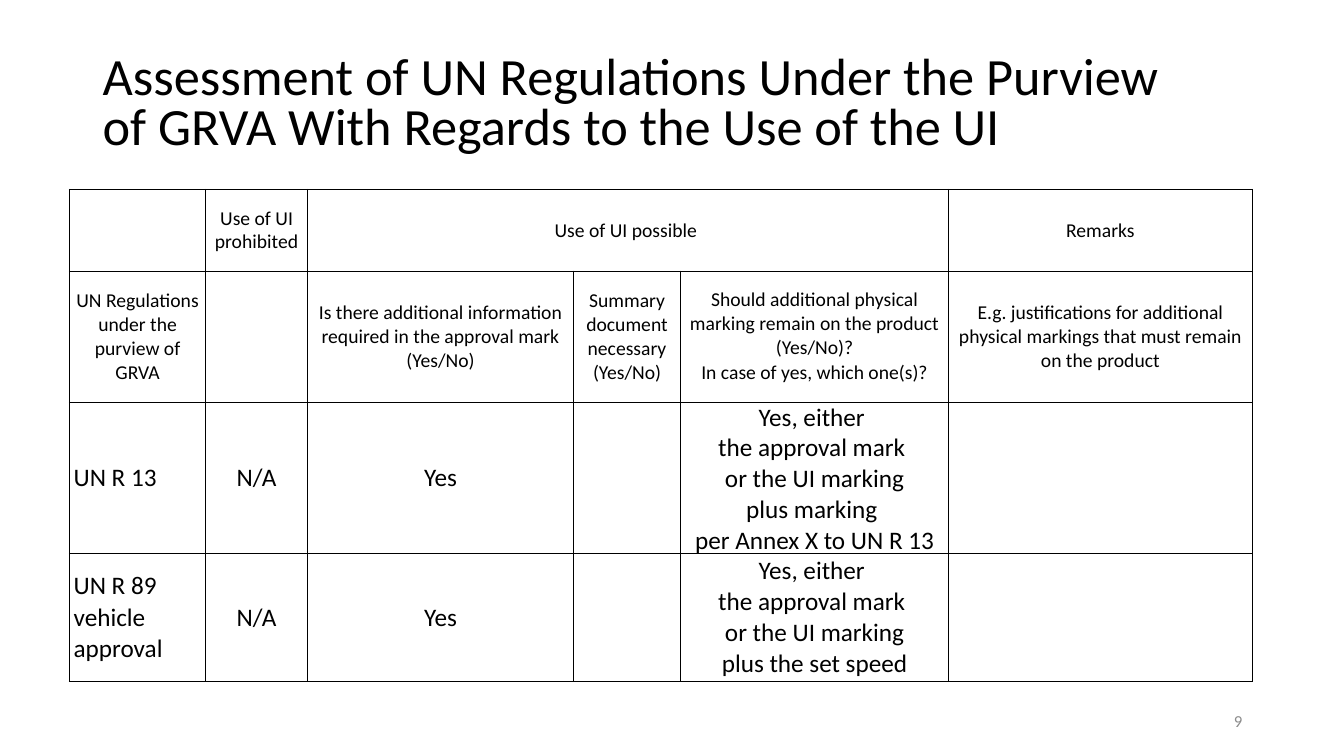
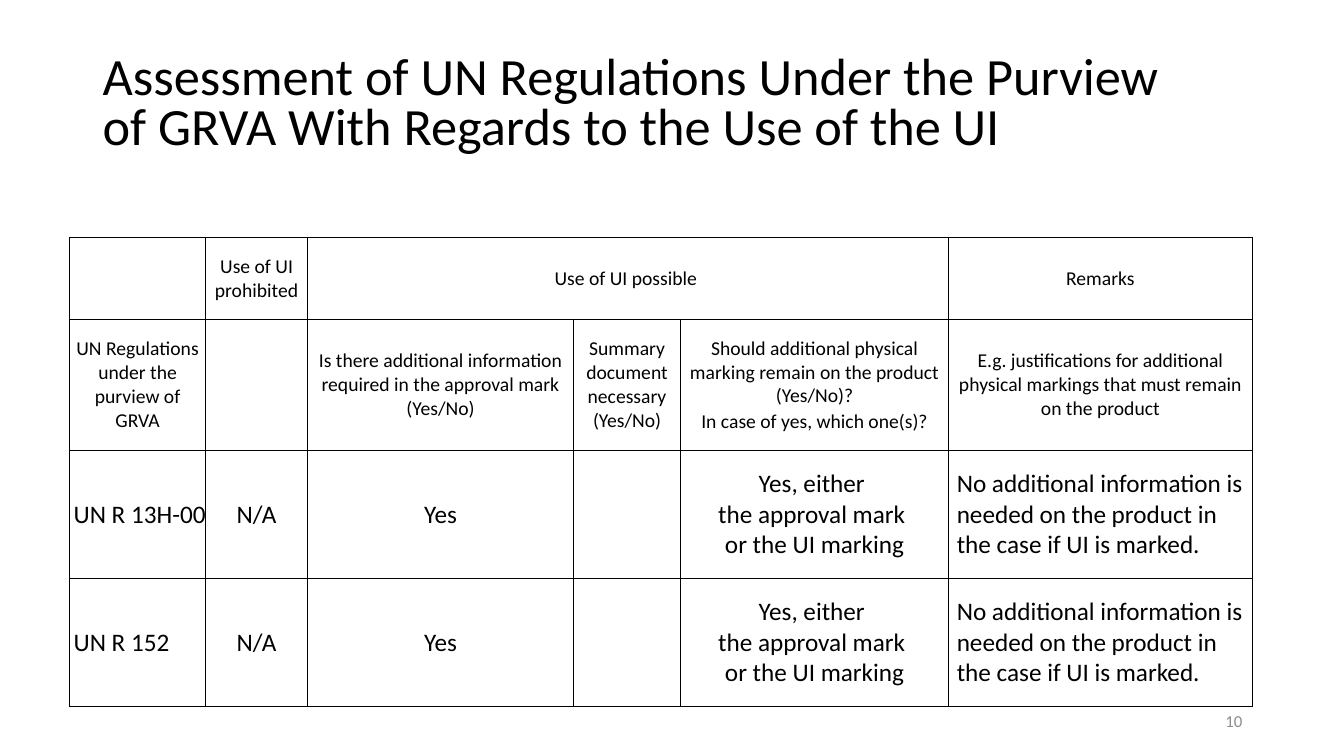
"""Build two slides assessing UN Regulations with regard to the use of the UI."""
from pptx import Presentation
from pptx.dml.color import RGBColor
from pptx.enum import text
from pptx.oxml import parse_xml
from pptx.oxml.ns import nsdecls
from pptx.util import Inches, Pt

BLACK = RGBColor(0x00, 0x00, 0x00)
WHITE = RGBColor(0xFF, 0xFF, 0xFF)
GREY = RGBColor(0x8C, 0x8C, 0x8C)
FONT = "Calibri"
LEFT, CENTER, RIGHT = text.PP_ALIGN.LEFT, text.PP_ALIGN.CENTER, text.PP_ALIGN.RIGHT
MIDDLE = text.MSO_ANCHOR.MIDDLE

TITLE = ("Assessment of UN Regulations Under the Purview \v"
         "of GRVA With Regards to the Use of the UI")
HEADINGS = [
    ["", "Use of UI prohibited", "Use of UI possible ", "", "", "Remarks"],
    ["UN Regulations under the purview of GRVA",
     "",
     "Is there additional information required in the approval mark\v(Yes/No)",
     "Summary document necessary (Yes/No)",
     "Should additional physical marking remain on the product (Yes/No)?\n"
     "In case of yes, which one(s)?",
     "E.g. justifications for additional physical markings that must remain on the product"],
]
EITHER = "Yes, either \vthe approval mark \vor the UI marking"
NO_INFO = "No additional information is needed on the product in the case if UI is marked."
PAGES = [
    {"number": "9", "top": 1.88, "regulations": [
        ("UN R 13", EITHER + "\nplus marking \nper Annex X to UN R 13", ""),
        ("UN R 89\nvehicle approval", EITHER + "\vplus the set speed", ""),
    ]},
    {"number": "10", "top": 2.36, "regulations": [
        ("UN R 13H-00", EITHER, NO_INFO),
        ("UN R 152", EITHER, NO_INFO),
    ]},
]
COLUMNS = [1.35, 1.01, 2.64, 1.06, 2.66, 3.01]
ROWS = [0.81, 1.3, 1.27, 1.27]
NAME, REMARKS = 0, 5
PADDING = Inches(0.04)


def write(frame, words, size, color=BLACK, align=LEFT):
    frame.text = words
    frame.word_wrap = True
    for paragraph in frame.paragraphs:
        paragraph.alignment = align
        for run in paragraph.runs:
            run.font.name, run.font.size = FONT, Pt(size)
            run.font.color.rgb = color


def add_text(slide, box, words, size, color=BLACK, align=LEFT):
    frame = slide.shapes.add_textbox(*map(Inches, box)).text_frame
    write(frame, words, size, color, align)
    frame.vertical_anchor = MIDDLE
    return frame


def add_borders(cell):
    properties = cell._tc.get_or_add_tcPr()
    for side in ("lnL", "lnR", "lnT", "lnB"):
        properties.append(parse_xml(
            f'<a:{side} {nsdecls("a")} w="{Pt(1)}"><a:solidFill>'
            f'<a:srgbClr val="{BLACK}"/></a:solidFill></a:{side}>'))


def fill_cell(cell, words, row, column):
    add_borders(cell)
    cell.fill.solid()
    cell.fill.fore_color.rgb = WHITE
    if not words:
        return
    heading = row < len(HEADINGS)
    indented = not heading and column in (NAME, REMARKS)
    write(cell.text_frame, words, 14 if heading else 18,
          align=LEFT if indented else CENTER)
    cell.vertical_anchor = MIDDLE
    cell.margin_top = cell.margin_bottom = 0
    cell.margin_left = PADDING if (heading and column == NAME) or (
        indented and column == REMARKS) else 0
    cell.margin_right = PADDING if heading and column == NAME else 0
    paragraphs = cell.text_frame.paragraphs
    for paragraph in paragraphs:
        gap = Pt(0.5) if len(paragraphs) < 3 else 0
        paragraph.space_before = paragraph.space_after = gap
        if indented:
            paragraph._p.get_or_add_pPr().set("marL", str(PADDING))


def add_assessment(slide, top, regulations):
    rows = HEADINGS + [[name, "N/A", "Yes", "", marking, remark]
                       for name, marking, remark in regulations]
    table = slide.shapes.add_table(
        len(ROWS), len(COLUMNS), Inches(0.69), Inches(top),
        Inches(sum(COLUMNS)), Inches(sum(ROWS))).table
    table.first_row = table.horz_banding = False
    for column, width in zip(table.columns, COLUMNS):
        column.width = Inches(width)
    for row, height in zip(table.rows, ROWS):
        row.height = Inches(height)
    for r, row in enumerate(rows):
        for c, words in enumerate(row):
            fill_cell(table.cell(r, c), words, r, c)
    table.cell(0, 2).merge(table.cell(0, 4))


def main():
    deck = Presentation()
    deck.slide_width, deck.slide_height = Inches(13.33), Inches(7.5)
    for page in PAGES:
        slide = deck.slides.add_slide(deck.slide_layouts[6])
        add_text(slide, (9.42, 6.95, 3, 0.4), page["number"], 12, GREY, RIGHT)
        title = add_text(slide, (0.92, 0.32, 11.5, 1.45), TITLE, 37.4)
        title.paragraphs[0].line_spacing = 0.8
        add_assessment(slide, page["top"], page["regulations"])
    deck.save("out.pptx")


if __name__ == "__main__":
    main()
